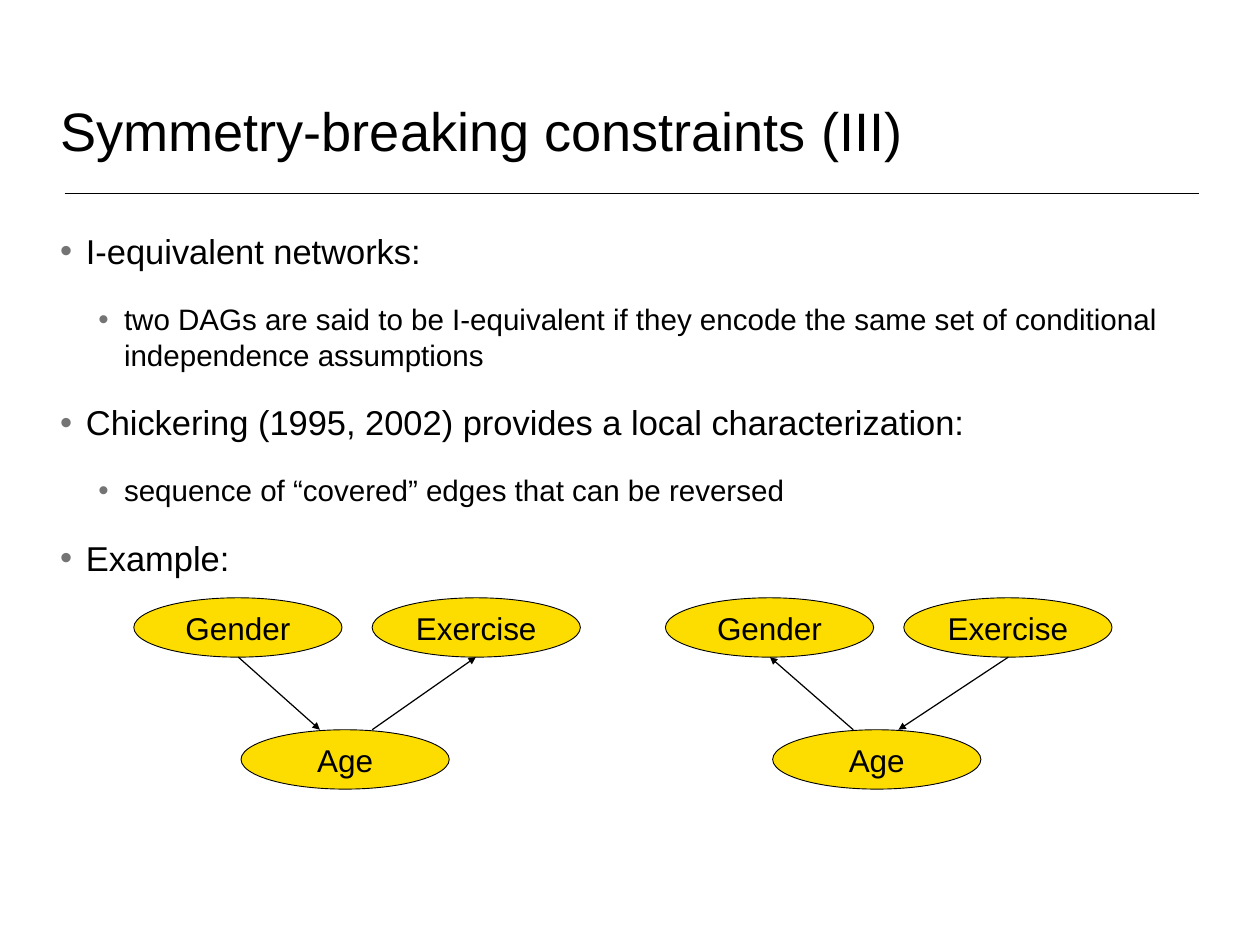
import pptx
import pptx.util
import pptx.dml.color
import pptx.enum.shapes
import pptx.enum.text
import pptx.oxml.ns
import lxml.etree

TITLE = "Symmetry-breaking constraints (III)"
BODY = [
    (0, "I-equivalent networks:"),
    (1, "two DAGs are said to be I-equivalent if they encode the same set of "
        "conditional independence assumptions"),
    (0, "Chickering (1995, 2002) provides a local characterization:"),
    (1, "sequence of “covered” edges that can be reversed"),
    (0, "Example:"),
]
# Node name: (offset from the network's left side, row)
NODES = {"Gender": (0, 0), "Exercise": (2.69, 0), "Age": (1.21, 1)}
# Network left side, then arrows as (tail offset, tail row, head offset, head row)
NETS = [
    (1.51, [(1.18, 0, 2.1, 1), (2.69, 1, 3.86, 0)]),
    (7.51, [(3.87, 0, 2.63, 1), (2.12, 1, 1.18, 0)]),
]
COLORS = {"ink": "000000", "node": "FDDD00", "dot": "747474"}
LEVELS = [{"size": 28, "left": 0.29}, {"size": 24, "left": 0.72}]
HANG = 0.29
WIDE, HIGH = 14.22, 10.67
LEFT, SPAN = 0.62, 12.97
NODE_W, NODE_H = 2.35, 0.67
ROW_TOP, ROW_GAP = 6.75, 1.49

inch, pt = pptx.util.Inches, pptx.util.Pt
anchor = pptx.enum.text.MSO_ANCHOR


def color(name):
    return pptx.dml.color.RGBColor.from_string(COLORS[name])


def add_tag(parent, tag, **attrs):
    name = pptx.oxml.ns.qn("a:" + tag)
    return lxml.etree.SubElement(parent, name, attrs)


def set_all(thing, values):
    for key, value in values.items():
        setattr(thing, key, value)


def write(para, text, size):
    run = para.add_run()
    run.text = text
    set_all(run.font, {"size": pt(size), "name": "Arial"})
    run.font.color.rgb = color("ink")


def add_box(slide, top, high, **frame):
    box = slide.shapes.add_textbox(*map(inch, (LEFT, top, SPAN, high)))
    pad = {"margin_" + side: inch(0.06)
           for side in ("left", "right", "top", "bottom")}
    set_all(box.text_frame, {"word_wrap": True, **pad, **frame})
    return box.text_frame


def add_point(para, level, text):
    look = LEVELS[level]
    set_all(para, {"level": level, "space_before": pt(24)})
    props = para._p.get_or_add_pPr()
    props.set("marL", str(inch(look["left"])))
    props.set("indent", str(-inch(HANG)))
    add_tag(add_tag(props, "buClr"), "srgbClr", val=COLORS["dot"])
    add_tag(props, "buFont", typeface="Arial")
    add_tag(props, "buChar", char="•")
    write(para, text, look["size"])


def add_line(slide, ends, width, arrow=False):
    kind = pptx.enum.shapes.MSO_CONNECTOR.STRAIGHT
    link = slide.shapes.add_connector(kind, *map(inch, ends))
    link.line.color.rgb = color("ink")
    link.line.width = pt(width)
    if arrow:
        add_tag(link.line._get_or_add_ln(), "tailEnd", type="triangle")
    add_tag(link._element.spPr, "effectLst")


def add_node(slide, left, top, text):
    kind = pptx.enum.shapes.MSO_SHAPE.OVAL
    node = slide.shapes.add_shape(
        kind, *map(inch, (left, top, NODE_W, NODE_H)))
    node.shadow.inherit = False
    node.fill.solid()
    node.fill.fore_color.rgb = color("node")
    node.line.color.rgb = color("ink")
    node.line.width = pt(0.75)
    set_all(node.text_frame,
            {"word_wrap": False, "vertical_anchor": anchor.MIDDLE})
    para = node.text_frame.paragraphs[0]
    para.alignment = pptx.enum.text.PP_ALIGN.CENTER
    write(para, text, 25.6)


def add_net(slide, left, arrows):
    for name, (shift, row) in NODES.items():
        add_node(slide, left + shift, ROW_TOP + row * ROW_GAP, name)
    # Arrows run between the upper nodes' bottom and the lower node's top
    edges = (ROW_TOP + NODE_H, ROW_TOP + ROW_GAP)
    for tail, start, head, end in arrows:
        ends = (left + tail, edges[start], left + head, edges[end])
        add_line(slide, ends, 1, arrow=True)


def main():
    deck = pptx.Presentation()
    set_all(deck, {"slide_width": inch(WIDE), "slide_height": inch(HIGH)})
    slide = deck.slides.add_slide(deck.slide_layouts[6])
    add_line(slide, (0.73, 2.18, 13.53, 2.18), 0.75)
    title = add_box(slide, 0.36, 1.53, vertical_anchor=anchor.BOTTOM)
    write(title.paragraphs[0], TITLE, 44)
    body = add_box(slide, 2.54, 7.18)
    for index, (level, text) in enumerate(BODY):
        para = body.add_paragraph() if index else body.paragraphs[0]
        add_point(para, level, text)
    for left, arrows in NETS:
        add_net(slide, left, arrows)
    deck.save("out.pptx")


if __name__ == "__main__":
    main()
